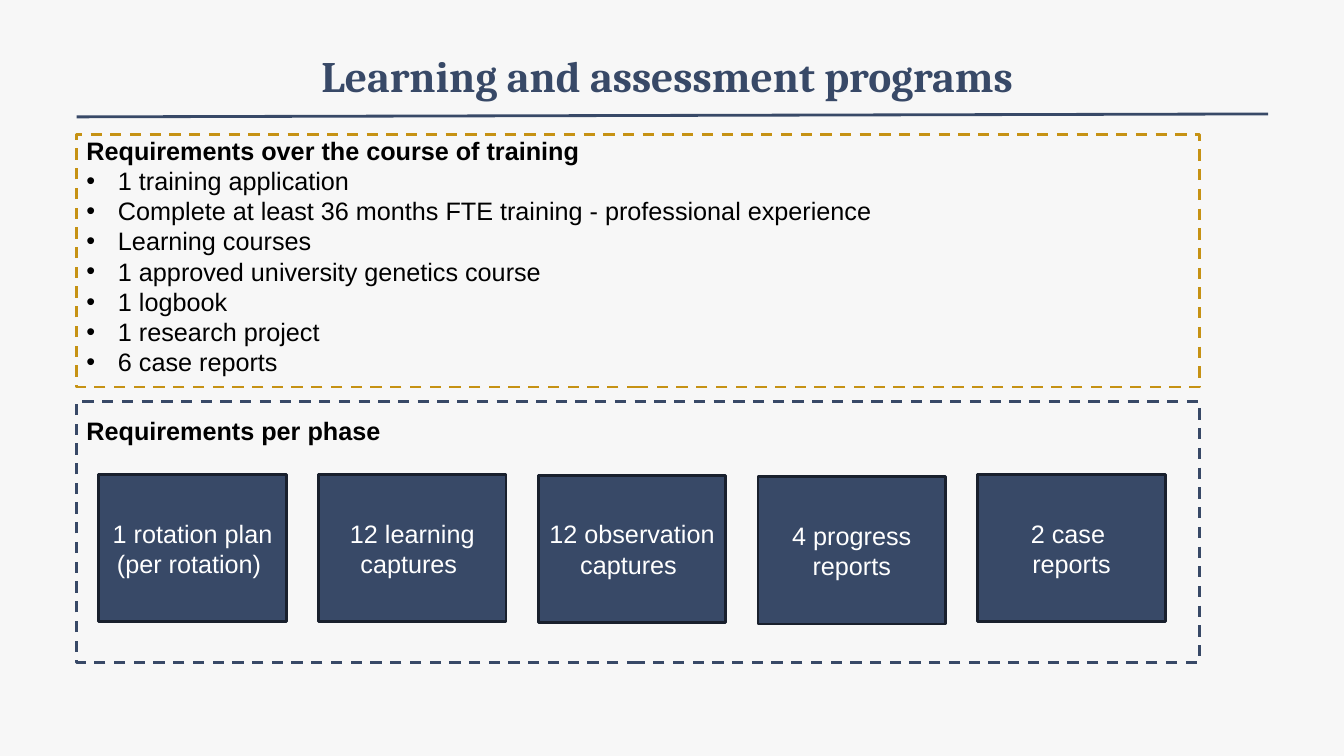
"""Build the slide on learning and assessment programs."""
from dataclasses import dataclass

from lxml import etree
from pptx import Presentation
from pptx.dml.color import RGBColor
from pptx.enum.dml import MSO_LINE
from pptx.enum.shapes import MSO_CONNECTOR, MSO_SHAPE
from pptx.enum.text import MSO_ANCHOR, MSO_AUTO_SIZE, PP_ALIGN
from pptx.oxml.ns import qn
from pptx.util import Pt

DASH = MSO_LINE.DASH
STRAIGHT = MSO_CONNECTOR.STRAIGHT
RECTANGLE = MSO_SHAPE.RECTANGLE
MIDDLE, TOP = MSO_ANCHOR.MIDDLE, MSO_ANCHOR.TOP
NO_FIT, GROW = MSO_AUTO_SIZE.NONE, MSO_AUTO_SIZE.SHAPE_TO_FIT_TEXT
CENTER, LEFT = PP_ALIGN.CENTER, PP_ALIGN.LEFT

NAVY, GOLD, DARK = "384967", "C69214", "19202D"
BLACK, WHITE, PALE = "000000", "FFFFFF", "F7F7F7"
MARGIN = 54.7
INDENT = 22.5
CARD_LEFT, CARD_STEP, CARD_WIDTH, CARD_HEIGHT = 70.6, 156.96, 133.9, 105.1


@dataclass(frozen=True)
class Frame:
    """A dashed outline around one group of requirements."""
    top: float
    height: float
    color: str


@dataclass(frozen=True)
class Block:
    """A heading with optional bullet items."""
    top: float
    width: float
    height: float
    heading: str
    items: tuple[str, ...] = ()


@dataclass(frozen=True)
class Card:
    """A filled box naming one requirement per phase."""
    text: str
    top: float = 339.1


FRAMES = (Frame(95.8, 180.7, GOLD), Frame(286.6, 186.5, NAVY))
BLOCKS = (
    Block(92.9, 708.5, 181.4, "Requirements over the course of training", (
        "1 training application",
        "Complete at least 36 months FTE training - professional experience",
        "Learning courses",
        "1 approved university genetics course",
        "1 logbook",
        "1 research project",
        "6 case reports",
    )),
    Block(293, 480.2, 28.8, "Requirements per phase"),
)
CARDS = (
    Card("1 rotation plan (per rotation) "),
    Card("12 learning captures "),
    Card("12 observation captures ", 339.5),
    Card("4 progress reports", 340.6),
    Card("2 case \vreports"),
)


def rgb(color: str) -> RGBColor:
    """Turn a hex string into a colour."""
    return RGBColor.from_string(color)


def format_text(para, size: float, color: str, bold: bool = False,
                name: str = "Arial", align=LEFT) -> None:
    """Format every run of a paragraph and align it."""
    para.alignment = align
    for span in para.runs:
        span.font.name = name
        span.font.size = Pt(size)
        span.font.bold = bold
        span.font.color.rgb = rgb(color)


def add_bullet(para) -> None:
    """Give a paragraph a hanging round bullet."""
    properties = para._p.get_or_add_pPr()
    properties.set("marL", str(Pt(INDENT)))
    properties.set("indent", str(-Pt(INDENT)))
    etree.SubElement(properties, qn("a:buFont")).set("typeface", "Arial")
    etree.SubElement(properties, qn("a:buChar")).set("char", "•")


def add_title(page, text: str) -> None:
    """Fill and place the title placeholder."""
    title = page.shapes.title
    title.left, title.top = Pt(119.5), Pt(20.9)
    title.width, title.height = Pt(720.7), Pt(65.5)
    text_frame = title.text_frame
    text_frame.text = text
    text_frame.auto_size = NO_FIT
    text_frame.vertical_anchor = MIDDLE
    text_frame.margin_left = text_frame.margin_right = Pt(5)
    text_frame.margin_top = text_frame.margin_bottom = Pt(2.9)
    format_text(text_frame.paragraphs[0], 31, NAVY, True, "Cambria", CENTER)


def add_rule(page) -> None:
    """Draw the line under the title."""
    rule = page.shapes.add_connector(
        STRAIGHT, Pt(MARGIN), Pt(83.5), Pt(905.8), Pt(81.4))
    rule.line.color.rgb = rgb(NAVY)
    rule.line.width = Pt(2)
    etree.SubElement(rule._element.spPr, qn("a:effectLst"))


def add_box(page, left: float, top: float, width: float, height: float,
            line: str):
    """Draw a rectangle with a two-point outline."""
    box = page.shapes.add_shape(
        RECTANGLE, Pt(left), Pt(top), Pt(width), Pt(height))
    box.shadow.inherit = False
    box.line.color.rgb = rgb(line)
    box.line.width = Pt(2)
    return box


def add_frame(page, frame: Frame) -> None:
    """Draw an unfilled dashed frame."""
    box = add_box(page, MARGIN, frame.top, 802.1, frame.height, frame.color)
    box.fill.background()
    box.line.dash_style = DASH


def add_block(page, block: Block) -> None:
    """Write a heading and its bullet items."""
    box = page.shapes.add_textbox(
        Pt(MARGIN), Pt(block.top), Pt(block.width), Pt(block.height))
    text_frame = box.text_frame
    text_frame.word_wrap = True
    text_frame.auto_size = GROW
    text_frame.vertical_anchor = TOP
    text_frame.text = block.heading
    format_text(text_frame.paragraphs[0], 18, BLACK, True)
    for item in block.items:
        para = text_frame.add_paragraph()
        para.text = item
        add_bullet(para)
        format_text(para, 18, BLACK)


def add_card(page, card: Card, left: float) -> None:
    """Draw a filled card with centred text."""
    box = add_box(page, left, card.top, CARD_WIDTH, CARD_HEIGHT, DARK)
    box.fill.solid()
    box.fill.fore_color.rgb = rgb(NAVY)
    text_frame = box.text_frame
    text_frame.word_wrap = True
    text_frame.vertical_anchor = MIDDLE
    text_frame.text = card.text
    format_text(text_frame.paragraphs[0], 18, WHITE, align=CENTER)


def main() -> None:
    """Build and save the deck."""
    deck = Presentation()
    deck.slide_width, deck.slide_height = Pt(960), Pt(540)
    page = deck.slides.add_slide(deck.slide_layouts[5])
    page.background.fill.solid()
    page.background.fill.fore_color.rgb = rgb(PALE)
    add_title(page, "Learning and assessment programs ")
    add_rule(page)
    for frame in FRAMES:
        add_frame(page, frame)
    for block in BLOCKS:
        add_block(page, block)
    for index, card in enumerate(CARDS):
        add_card(page, card, CARD_LEFT + index * CARD_STEP)
    deck.save("out.pptx")


if __name__ == "__main__":
    main()
